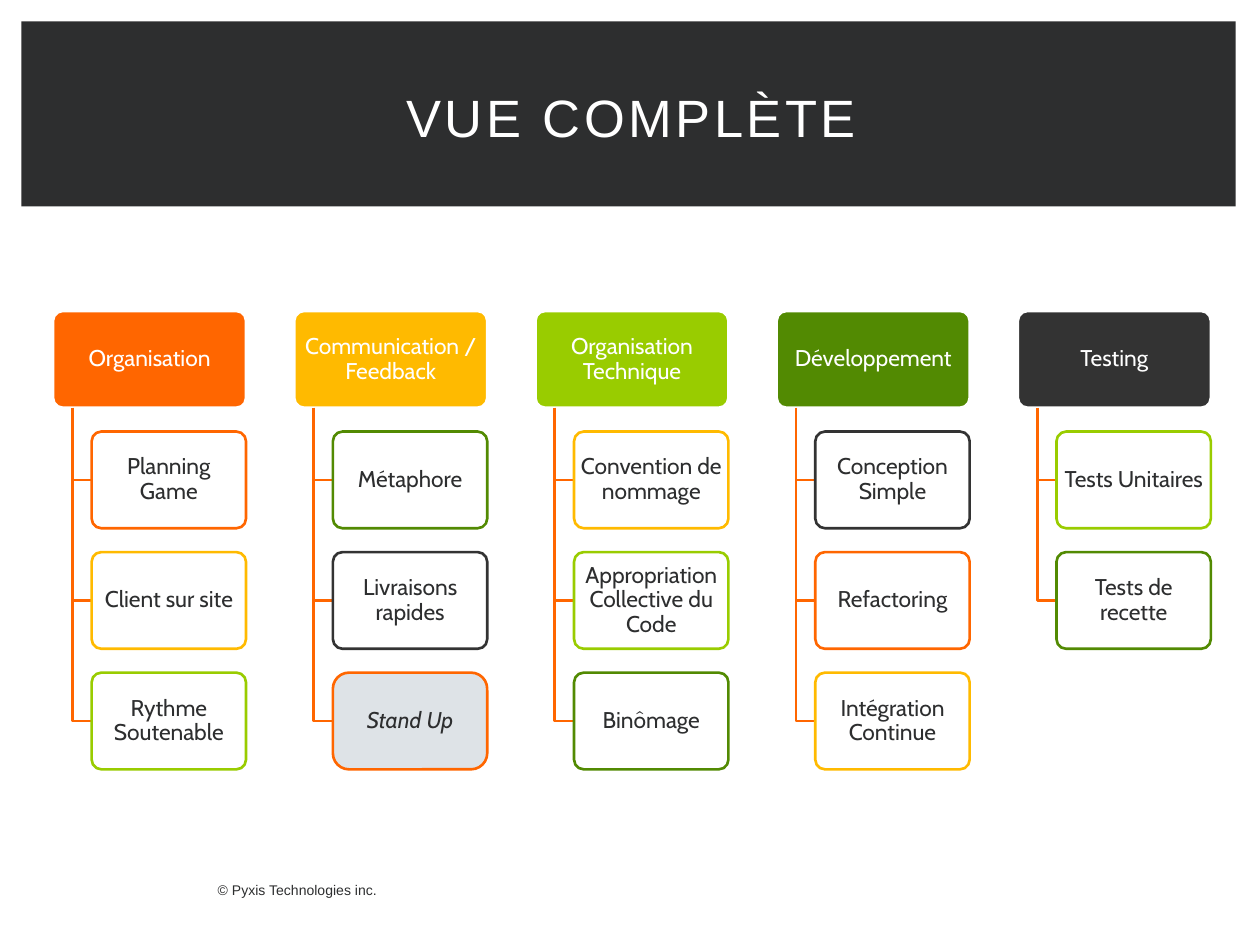
from itertools import cycle

from lxml.etree import SubElement
from pptx import Presentation
from pptx.dml.color import RGBColor
from pptx.enum.shapes import MSO_SHAPE as SHAPE
from pptx.enum.text import MSO_ANCHOR as ANCHOR, PP_ALIGN as ALIGN
from pptx.oxml.ns import qn
from pptx.util import Cm, Pt

WHITE = RGBColor(0xFF, 0xFF, 0xFF)
INK = RGBColor(0x2D, 0x2E, 0x2F)
MIST = RGBColor(0xDE, 0xE3, 0xE7)
ORANGE = RGBColor(0xFF, 0x66, 0x00)
AMBER = RGBColor(0xFF, 0xBA, 0x00)
LIME = RGBColor(0x99, 0xCC, 0x00)
GREEN = RGBColor(0x52, 0x8A, 0x02)
CHARCOAL = RGBColor(0x33, 0x33, 0x33)
THEME_COLOURS = [ORANGE, AMBER, LIME, GREEN, CHARCOAL]

HIGHLIGHTED = "Stand Up"
PRACTICES = {
    "Organisation": ["Planning Game", "Client sur site", "Rythme Soutenable"],
    "Communication / Feedback": ["Métaphore", "Livraisons rapides", HIGHLIGHTED],
    "Organisation Technique": [
        "Convention de nommage",
        "Appropriation Collective du Code",
        "Binômage",
    ],
    "Développement": ["Conception Simple", "Refactoring", "Intégration Continue"],
    "Testing": ["Tests Unitaires", "Tests de recette"],
}


def style_text(paragraph, font_name, size, colour):
    font = paragraph.font
    font.name = font_name
    font.size = Pt(size)
    font.color.rgb = colour


def add_banner(slide, left, top, width, height):
    band = slide.shapes.add_shape(SHAPE.RECTANGLE, left, top, width, height)
    band.shadow.inherit = False
    band.fill.solid()
    band.fill.fore_color.rgb = INK
    band.line.fill.background()

    title = slide.shapes.add_textbox(
        left + Cm(0.61), top + Cm(0.15), width - Cm(1.1), height - Cm(0.18)
    )
    frame = title.text_frame
    frame.word_wrap = True
    frame.vertical_anchor = ANCHOR.MIDDLE
    heading = frame.paragraphs[0]
    heading.alignment = ALIGN.CENTER
    run = heading.add_run()
    run.text = "VUE COMPLÈTE"
    run.font._element.set("spc", "200")
    style_text(heading, "Arial", 30, WHITE)


def add_card(slide, label, left, top, width, height, fill, outline, text_colour):
    card = slide.shapes.add_shape(SHAPE.ROUNDED_RECTANGLE, left, top, width, height)
    card.shadow.inherit = False
    card.adjustments[0] = 0.1
    card.fill.solid()
    card.fill.fore_color.rgb = fill
    card.line.color.rgb = outline
    card.line.width = Pt(1.5)

    frame = card.text_frame
    frame.word_wrap = True
    frame.vertical_anchor = ANCHOR.MIDDLE
    frame.margin_left = frame.margin_right = Cm(0.08)
    frame.margin_top = frame.margin_bottom = Cm(0.05)
    caption = frame.paragraphs[0]
    caption.text = label
    caption.alignment = ALIGN.CENTER
    caption.line_spacing = 0.9
    style_text(caption, "Cabin", 13, text_colour)
    return card


def add_branch(slide, start_x, start_y, end_x, end_y):
    builder = slide.shapes.build_freeform(start_x, start_y)
    builder.add_line_segments([(start_x, end_y), (end_x, end_y)], close=False)
    branch = builder.convert_to_shape()
    branch.shadow.inherit = False
    branch.fill.background()
    branch.line.color.rgb = ORANGE
    branch.line.width = Pt(1.5)


def add_practice(slide, practice, outline, left, top, width, height):
    card = add_card(slide, practice, left, top, width, height, WHITE, outline, INK)
    if practice == HIGHLIGHTED:
        card.adjustments[0] = 0.1667
        card.fill.fore_color.rgb = MIST
        card.text_frame.paragraphs[0].font.italic = True
    else:
        white = card.fill._xPr.find(qn("a:solidFill"))[0]
        SubElement(white, qn("a:alpha"), val="90000")


def add_theme(slide, theme, practices, colour, outlines, left, top, width):
    card_height = Cm(1.95)
    row_pitch = Cm(2.43)
    trunk_x = left + width // 10
    practice_left = left + width // 5
    practice_width = width * 4 // 5

    add_card(slide, theme, left, top, width, card_height, colour, WHITE, WHITE)
    for row, practice in enumerate(practices, start=1):
        practice_top = top + row * row_pitch
        add_branch(
            slide, trunk_x, top + card_height,
            practice_left, practice_top + card_height // 2,
        )
        add_practice(
            slide, practice, next(outlines),
            practice_left, practice_top, practice_width, card_height,
        )


def add_practice_map(slide, left, top, width):
    theme_width = Cm(3.89)
    pitch = (width - theme_width) // (len(PRACTICES) - 1)
    outlines = cycle(THEME_COLOURS)
    for column, (theme, practices) in enumerate(PRACTICES.items()):
        add_theme(
            slide, theme, practices, THEME_COLOURS[column], outlines,
            left + column * pitch, top, theme_width,
        )


def add_copyright(slide, left, top, width, height):
    notice = slide.shapes.add_textbox(left, top, width, height)
    notice.text_frame.word_wrap = False
    line = notice.text_frame.paragraphs[0]
    line.text = "© Pyxis Technologies inc."
    style_text(line, "Arial", 8, INK)


def main():
    deck = Presentation()
    deck.slide_width = Cm(25.4)
    deck.slide_height = Cm(19.05)
    slide = deck.slides.add_slide(deck.slide_layouts[6])
    add_banner(slide, Cm(0.43), Cm(0.43), Cm(24.48), Cm(3.73))
    add_copyright(slide, Cm(4.14), Cm(17.65), Cm(3.89), Cm(0.61))
    add_practice_map(slide, Cm(1.07), Cm(6.27), Cm(23.34))
    deck.save("out.pptx")


if __name__ == "__main__":
    main()
